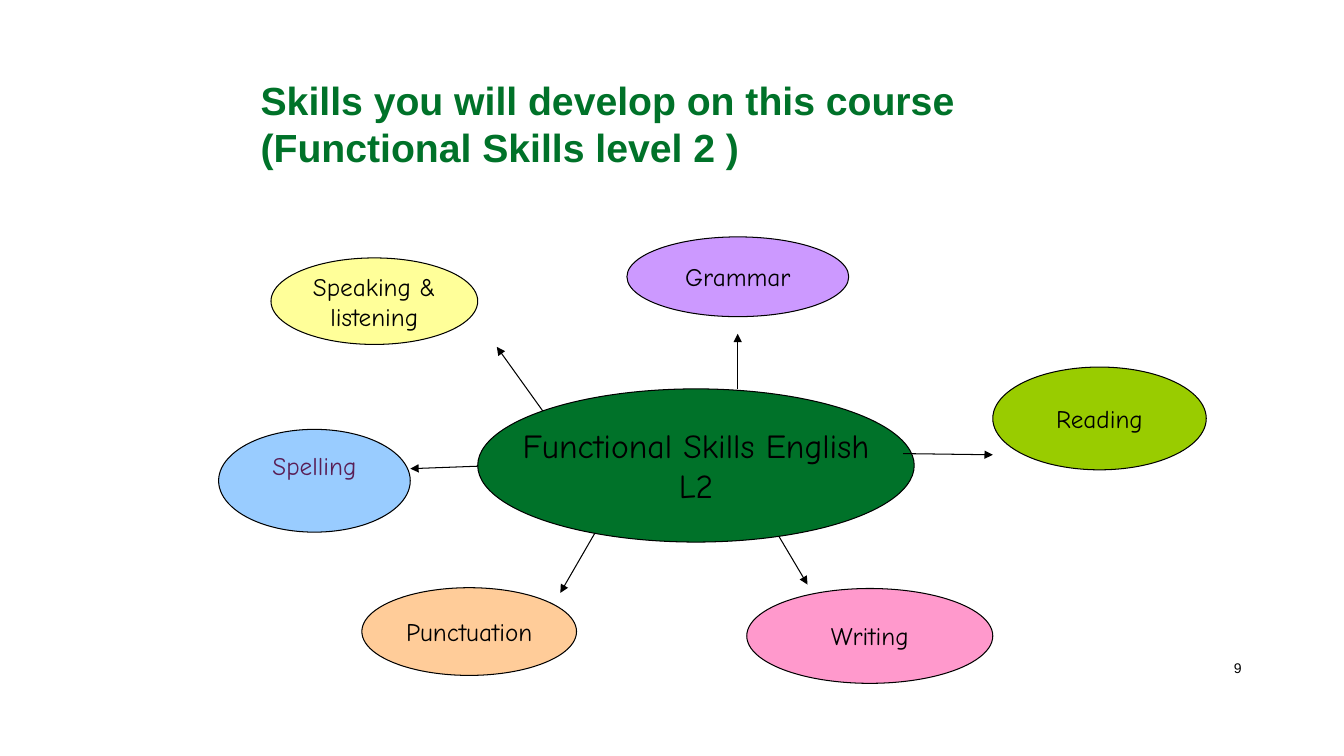
import pptx
import pptx.dml.color
import pptx.enum.shapes
import pptx.enum.text
import pptx.oxml.ns
import pptx.util
from lxml import etree

Cm = pptx.util.Cm
Pt = pptx.util.Pt
ALIGN = pptx.enum.text.PP_ALIGN

THEME = {
    "heading_font": "Arial", "diagram_font": "Comic Neue",
    "title_size": 28, "hub_size": 24, "topic_size": 18, "number_size": 10,
    "line_width": 0.75,
    "green": "007229", "black": "000000", "plum": "591E55",
    "yellow": "FFFF99", "pink": "FF99CC", "lime": "99CC00",
    "lilac": "CC99FF", "blue": "99CCFF", "peach": "FFCC99",
}

TITLE = ["Skills you will develop on this course", "(Functional Skills level 2 )"]
TITLE_BOX = (6.32, 1.52, 22.02, 3.18)
PAGE_NUMBER = ["9"]
PAGE_NUMBER_BOX = (30.43, 16.31, 1.52, 1.02)

HUB = (["Functional Skills English", "L2"], (12.04, 9.8, 11, 3.86))
TOPICS = [
    (["Speaking &", "listening"], (6.83, 6.5, 5.21, 2.18), "yellow", "black", 0.13),
    (["Writing"], (18.82, 14.83, 6.2, 2.39), "pink", "black", 0.13),
    (["Reading"], (25.02, 9.25, 5.38, 2.59), "lime", "black", 0.13),
    (["Grammar"], (15.8, 5.97, 5.59, 2.01), "lilac", "black", 0.13),
    (["Spelling"], (5.51, 10.82, 4.83, 2.59), "blue", "plum", 0.9),
    (["Punctuation"], (9.12, 14.81, 5.41, 2.21), "peach", "black", 0.13),
]

ARROWS_BEHIND_HUB = [
    (13.94, 10.72, 12.52, 8.74),
    (18.59, 9.8, 18.59, 8.41),
    (15.52, 12.52, 14.12, 14.94),
    (18.92, 12.32, 20.35, 14.73),
    (12.52, 11.73, 10.34, 11.81),
]
READING_ARROW = (22.76, 11.43, 25.02, 11.46)


def color(name):
    return pptx.dml.color.RGBColor.from_string(THEME[name])


def lengths(values):
    return [Cm(value) for value in values]


def write(shape, lines, font, size, ink, align, bold=False, wrap=True):
    frame = shape.text_frame
    frame.word_wrap = wrap
    frame.vertical_anchor = pptx.enum.text.MSO_ANCHOR.MIDDLE
    frame.text = "\n".join(lines)
    for paragraph in frame.paragraphs:
        paragraph.alignment = align
        paragraph.font.name = THEME[font]
        paragraph.font.size = Pt(THEME[size])
        paragraph.font.bold = bold
        paragraph.font.color.rgb = color(ink)


def add_ellipse(slide, lines, box, fill, ink, size, bottom=0.13):
    shape = slide.shapes.add_shape(pptx.enum.shapes.MSO_SHAPE.OVAL, *lengths(box))
    shape.shadow.inherit = False
    shape.fill.solid()
    shape.fill.fore_color.rgb = color(fill)
    shape.line.color.rgb = color("black")
    shape.line.width = Pt(THEME["line_width"])
    write(shape, lines, "diagram_font", size, ink, ALIGN.CENTER, wrap=False)
    shape.text_frame.margin_bottom = Cm(bottom)


def add_arrow(slide, ends):
    arrow = slide.shapes.add_connector(
        pptx.enum.shapes.MSO_CONNECTOR.STRAIGHT, *lengths(ends))
    arrow.line.color.rgb = color("black")
    arrow.line.width = Pt(THEME["line_width"])
    properties = arrow.element.spPr
    outline = properties.find(pptx.oxml.ns.qn("a:ln"))
    etree.SubElement(outline, pptx.oxml.ns.qn("a:tailEnd"), type="triangle")
    etree.SubElement(properties, pptx.oxml.ns.qn("a:effectLst"))


def main():
    presentation = pptx.Presentation()
    presentation.slide_width = Cm(33.87)
    presentation.slide_height = Cm(19.05)
    slide = presentation.slides.add_slide(presentation.slide_layouts[6])

    title = slide.shapes.add_textbox(*lengths(TITLE_BOX))
    write(title, TITLE, "heading_font", "title_size", "green", ALIGN.LEFT, bold=True)
    number = slide.shapes.add_textbox(*lengths(PAGE_NUMBER_BOX))
    write(number, PAGE_NUMBER, "heading_font", "number_size", "black", ALIGN.CENTER)

    for ends in ARROWS_BEHIND_HUB:
        add_arrow(slide, ends)
    for lines, box, fill, ink, bottom in TOPICS:
        add_ellipse(slide, lines, box, fill, ink, "topic_size", bottom)
    add_ellipse(slide, *HUB, "green", "black", "hub_size")
    add_arrow(slide, READING_ARROW)

    presentation.save("out.pptx")


if __name__ == "__main__":
    main()
